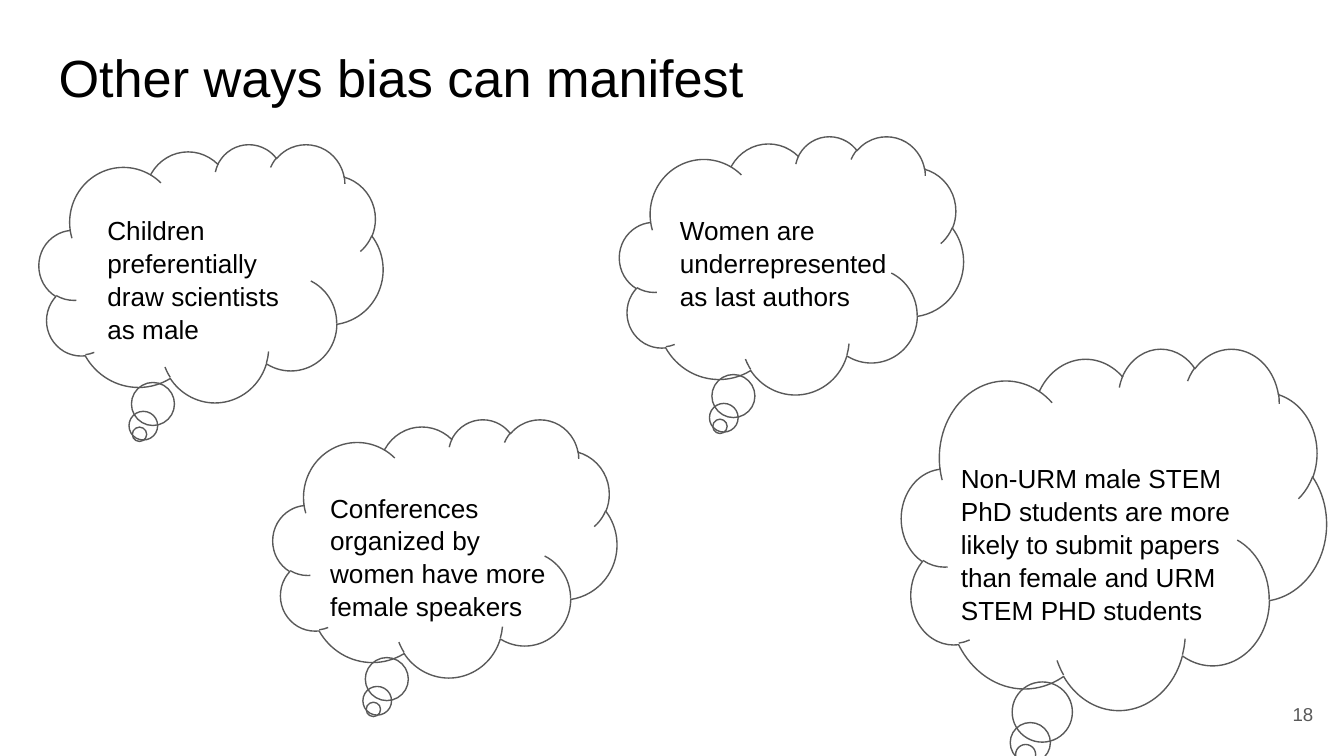
from dataclasses import dataclass

from pptx import Presentation
from pptx.dml.color import RGBColor
from pptx.enum.shapes import MSO_SHAPE as Shape
from pptx.enum.text import MSO_ANCHOR as Anchor, PP_ALIGN as Align
from pptx.util import Cm, Pt

BLACK = RGBColor(0x00, 0x00, 0x00)
GRAY = RGBColor(0x59, 0x59, 0x59)
PAD = Cm(0.25)


@dataclass
class Box:
    x: float
    y: float
    w: float
    h: float

    def lengths(self) -> list:
        return [Cm(n) for n in (self.x, self.y, self.w, self.h)]


@dataclass
class Thought:
    cloud: Box
    label: Box
    text: str


THOUGHTS = [
    Thought(Box(0.74, 2.72, 6.5, 4.88), Box(1.78, 3.78, 3.84, 2.41),
            "Children preferentially draw scientists as male"),
    Thought(Box(11.71, 2.57, 6.5, 4.88), Box(12.6, 3.78, 4.44, 2.41),
            "Women are underrepresented as last authors"),
    Thought(Box(5.16, 7.92, 6.5, 4.88), Box(5.99, 9.02, 4.65, 2.41),
            "Conferences organized by women have more female speakers"),
    Thought(Box(17.04, 6.58, 8.03, 6.83), Box(17.91, 8.46, 5.77, 2.41),
            "Non-URM male STEM PhD students are more likely to submit papers "
            "than female and URM STEM PHD students"),
]


def add_text(slide, box: Box, text: str, *, size: float = 14,
             color: RGBColor = BLACK, align=Align.LEFT, anchor=Anchor.TOP,
             spacing: float = 1.0) -> None:
    frame = slide.shapes.add_textbox(*box.lengths()).text_frame
    frame.word_wrap = True
    frame.vertical_anchor = anchor
    frame.margin_left = frame.margin_right = PAD
    frame.margin_top = frame.margin_bottom = PAD
    para = frame.paragraphs[0]
    para.alignment = align
    para.line_spacing = spacing
    run = para.add_run()
    run.text = text
    run.font.name = "Arial"
    run.font.size = Pt(size)
    run.font.color.rgb = color


def add_thought(slide, item: Thought) -> None:
    cloud = slide.shapes.add_shape(Shape.CLOUD_CALLOUT, *item.cloud.lengths())
    cloud.adjustments[0] = -0.208
    cloud.adjustments[1] = 0.625
    cloud.shadow.inherit = False
    cloud.fill.background()
    cloud.line.color.rgb = GRAY
    cloud.line.width = Pt(0.75)
    add_text(slide, item.label, item.text, spacing=1.05)


def main() -> None:
    deck = Presentation()
    deck.slide_width, deck.slide_height = Cm(25.4), Cm(14.29)
    slide = deck.slides.add_slide(deck.slide_layouts[6])
    add_text(slide, Box(0.86, 0.61, 23.67, 1.6),
             "Other ways bias can manifest", size=28)
    add_text(slide, Box(23.55, 12.95, 1.52, 1.09), "18", size=10, color=GRAY,
             align=Align.RIGHT, anchor=Anchor.MIDDLE)
    for item in THOUGHTS:
        add_thought(slide, item)
    deck.save("out.pptx")


if __name__ == "__main__":
    main()
